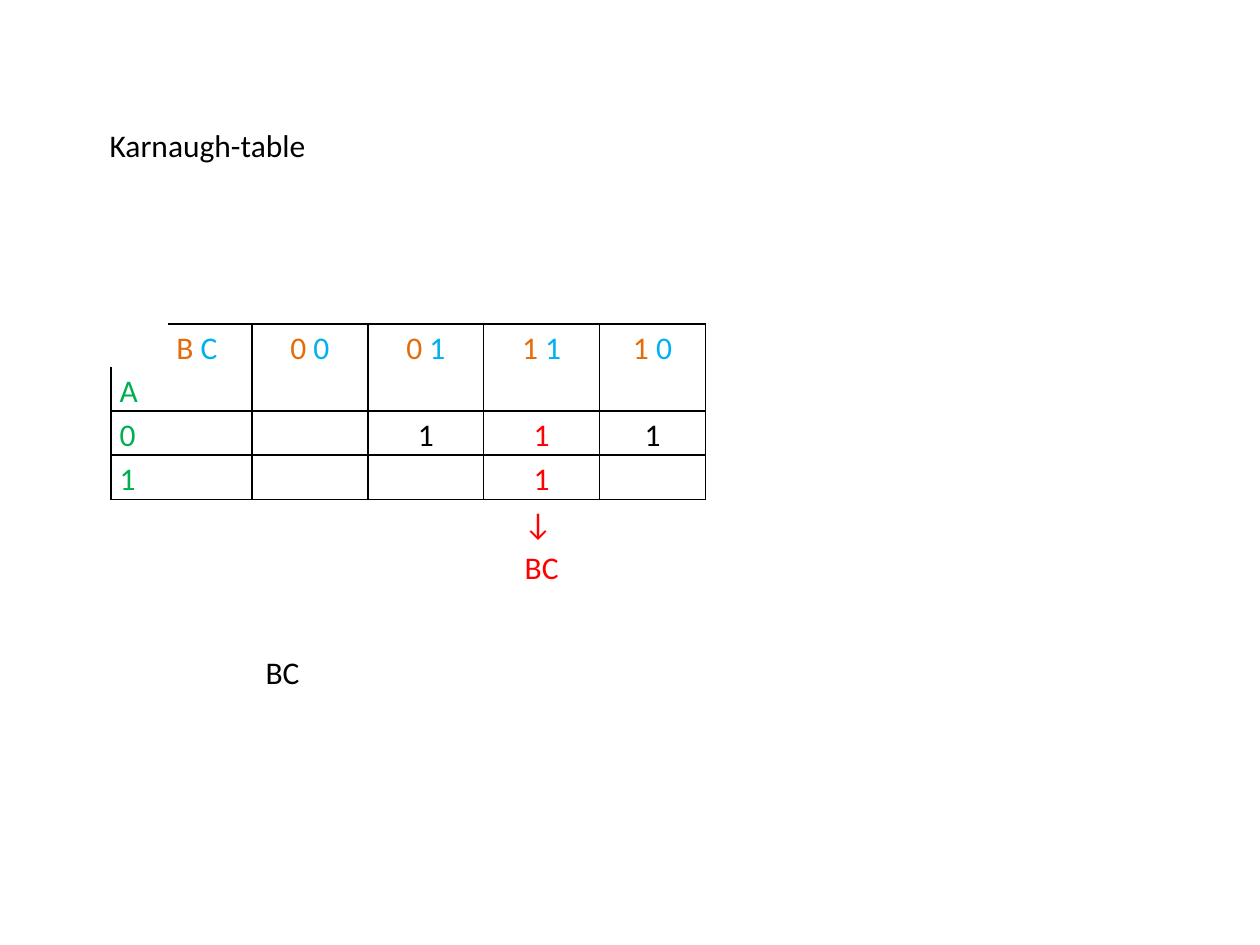
from pptx import Presentation
from pptx.dml.color import RGBColor
from pptx.enum.text import MSO_ANCHOR as Anchor, MSO_AUTO_SIZE as AutoSize, PP_ALIGN as Align
from pptx.oxml.ns import qn
from pptx.util import Inches, Pt
from lxml.etree import SubElement

BLACK = RGBColor(0x00, 0x00, 0x00)
ORANGE = RGBColor(0xE4, 0x6C, 0x0A)
BLUE = RGBColor(0x00, 0xB0, 0xF0)
GREEN = RGBColor(0x00, 0xB0, 0x50)
RED = RGBColor(0xFF, 0x00, 0x00)

# Content
HEADING = "Karnaugh-table"
RESULT = "BC"
BC_CODES = ["00", "01", "11", "10"]
A_VALUES = ["0", "1"]
MINTERMS = [(0, 1, BLACK), (0, 2, RED), (0, 3, BLACK), (1, 2, RED)]  # A row, BC column
GROUP_TERM = ["↓ ", "BC"]

# Layout
COLUMN_WIDTHS = [0.45, 0.67, 0.92, 0.92, 0.92, 0.84, 0.89]
ROW_HEIGHTS = [0.34] * 4 + [0.69]
HEAD_ROWS, FIRST_CODE_COLUMN = 2, 2
MAP_ROWS, MAP_COLUMNS = 4, 6
SIDES = {"a:lnL": (0, -1), "a:lnR": (0, 1), "a:lnT": (-1, 0), "a:lnB": (1, 0)}


def write(frame, paragraphs, align=Align.LEFT, spacing=1.15):
    """Each paragraph is a list of (text, colour) runs."""
    for index, runs in enumerate(paragraphs):
        paragraph = frame.paragraphs[0] if index == 0 else frame.add_paragraph()
        paragraph.alignment = align
        paragraph.line_spacing = spacing
        for text, colour in runs:
            run = paragraph.add_run()
            run.text = text
            run.font.name = "Calibri"
            run.font.size = Pt(18)
            run.font.color.rgb = colour


def region(row, column):
    """Cells of one region have no line between them."""
    if not (0 <= row < MAP_ROWS and 0 <= column < MAP_COLUMNS):
        return None
    return max(row, HEAD_ROWS - 1), max(column, 1)


def draw_borders(cell, row, column):
    properties = cell._tc.get_or_add_tcPr()
    for position, (side, (down, right)) in enumerate(SIDES.items()):
        line = SubElement(properties, qn(side), w=str(Pt(1)))
        properties.insert(position, line)
        differs = region(row, column) != region(row + down, column + right)
        if differs and (row, column) != (0, 0):
            fill = SubElement(line, qn("a:solidFill"))
            SubElement(fill, qn("a:srgbClr"), val=str(BLACK))
        else:
            SubElement(line, qn("a:noFill"))


def code_runs(b, c):
    return [[(b + " ", ORANGE), (c, BLUE)]]


prs = Presentation()
prs.slide_width, prs.slide_height = Inches(10), Inches(7.5)
slide = prs.slides.add_slide(prs.slide_layouts[5])

# Heading
heading = slide.shapes.title
heading.left, heading.top = Inches(0.77), Inches(0.95)
heading.width, heading.height = Inches(5.49), Inches(0.71)
heading.text_frame.auto_size = AutoSize.NONE
heading.text_frame.vertical_anchor = Anchor.TOP
write(heading.text_frame, [[(HEADING, BLACK)]], spacing=1.0)

# Empty map
karnaugh = slide.shapes.add_table(
    len(ROW_HEIGHTS), len(COLUMN_WIDTHS), Inches(0.88), Inches(2.57),
    Inches(sum(COLUMN_WIDTHS)), Inches(sum(ROW_HEIGHTS))).table
karnaugh.first_row = karnaugh.horz_banding = False
for column, width in enumerate(COLUMN_WIDTHS):
    karnaugh.columns[column].width = Inches(width)
for row, height in enumerate(ROW_HEIGHTS):
    karnaugh.rows[row].height = Inches(height)
    for column in range(len(COLUMN_WIDTHS)):
        cell = karnaugh.cell(row, column)
        cell.margin_left = cell.margin_right = Inches(0.07)
        cell.margin_top = cell.margin_bottom = 0
        cell.fill.background()
        draw_borders(cell, row, column)

for column in range(1, MAP_COLUMNS):
    karnaugh.cell(0, column).merge(karnaugh.cell(HEAD_ROWS - 1, column))
for row in range(HEAD_ROWS, len(ROW_HEIGHTS)):
    karnaugh.cell(row, 0).merge(karnaugh.cell(row, 1))

# Variables and their codes
write(karnaugh.cell(0, 1).text_frame, code_runs("B", "C"))
for row, label in enumerate(["A"] + A_VALUES, start=HEAD_ROWS - 1):
    write(karnaugh.cell(row, 0).text_frame, [[(label, GREEN)]])
for column, code in enumerate(BC_CODES, start=FIRST_CODE_COLUMN):
    write(karnaugh.cell(0, column).text_frame, code_runs(*code), align=Align.CENTER)

# Minterms and the term of the red group
entries = [(HEAD_ROWS + a, bc, [[("1", colour)]]) for a, bc, colour in MINTERMS]
entries.append((MAP_ROWS, 2, [[(text, RED)] for text in GROUP_TERM]))
for row, bc, paragraphs in entries:
    cell = karnaugh.cell(row, FIRST_CODE_COLUMN + bc)
    cell.vertical_anchor = Anchor.MIDDLE
    write(cell.text_frame, paragraphs, align=Align.CENTER)

# Result
result = slide.shapes.add_textbox(Inches(2.01), Inches(5.09), Inches(0.47), Inches(0.43))
result.text_frame.word_wrap = False
result.text_frame.auto_size = AutoSize.SHAPE_TO_FIT_TEXT
write(result.text_frame, [[(RESULT, BLACK)]])

prs.save("out.pptx")
